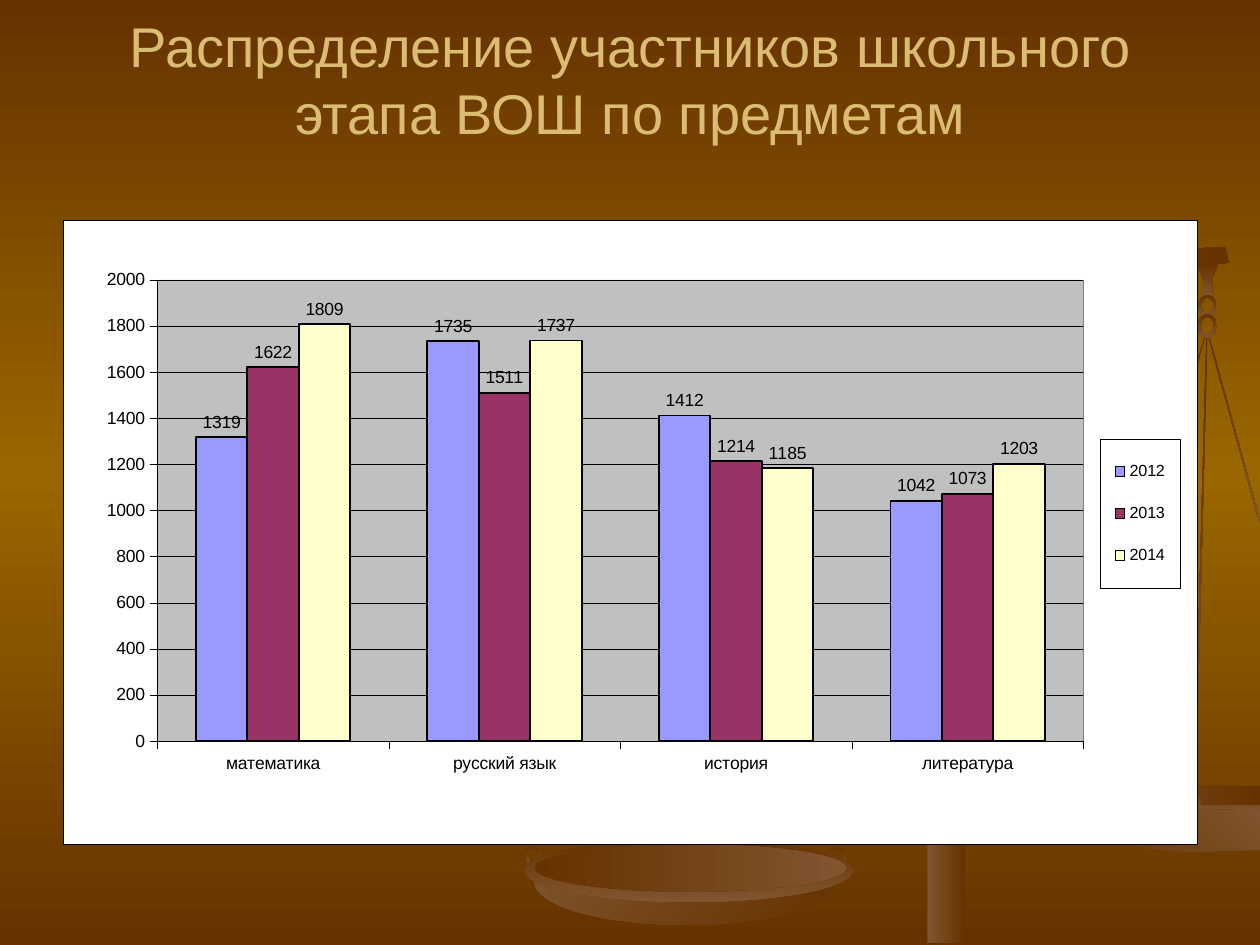
from dataclasses import dataclass

import pptx
import pptx.chart.data
import pptx.dml.color
import pptx.enum.chart
import pptx.enum.shapes
import pptx.enum.text
import pptx.oxml
import pptx.oxml.ns
import pptx.util
from copy import deepcopy

Pt = pptx.util.Pt
qn = pptx.oxml.ns.qn
SHAPE = pptx.enum.shapes.MSO_SHAPE


@dataclass(frozen=True)
class Theme:
    font: str = "Arial"
    dark: str = "663300"
    middle: str = "996600"
    light: str = "805530"
    title: str = "DBBD71"
    ink: str = "000000"
    paper: str = "FFFFFF"
    plot: str = "C0C0C0"
    plot_border: str = "808080"
    series: tuple = ("9999FF", "993366", "FFFFCC")
    title_size: float = 32
    chart_size: float = 10
    legend_size: float = 9.2
    hairline: float = 0.25


THEME = Theme()
RISING = (THEME.dark, THEME.light)
FALLING = (THEME.light, THEME.dark)
SUBJECTS = ("математика", "русский язык", "история", "литература")
PARTICIPANTS = {
    "2012": (1319, 1735, 1412, 1042),
    "2013": (1622, 1511, 1214, 1073),
    "2014": (1809, 1737, 1185, 1203),
}


def rgb(value):
    return pptx.dml.color.RGBColor.from_string(value)


def fill_gradient(fill, colors, angle):
    """Fill with two colours; the angle runs clockwise."""
    fill.gradient()
    fill.gradient_angle = (360 - angle) % 360
    for stop, color, position in zip(fill.gradient_stops, colors, (0, 1)):
        stop.color.rgb = rgb(color)
        stop.position = position


def finish_decoration(shape, colors, angle):
    shape.shadow.inherit = False
    shape.line.fill.background()
    fill_gradient(shape.fill, colors, angle)


def add_preset(slide, kind, box, colors=RISING, angle=90, rotation=0):
    shape = slide.shapes.add_shape(kind, *map(Pt, box))
    shape.rotation = rotation
    finish_decoration(shape, colors, angle)
    return shape


def add_outline(slide, left, top, points, colors=RISING, angle=90):
    """Draw a closed outline from points relative to left and top."""
    placed = [(Pt(left + x), Pt(top + y)) for x, y in points]
    builder = slide.shapes.build_freeform(*placed[0])
    builder.add_line_segments(placed[1:], close=True)
    finish_decoration(builder.convert_to_shape(), colors, angle)


def add_link(slide, left, top, width, height):
    link = add_preset(slide, SHAPE.DONUT, (left, top, width, height))
    link.adjustments[0] = 0.16


def set_background(slide):
    fill = slide.background.fill
    fill_gradient(fill, (THEME.dark, THEME.dark), 90)
    first = slide.element.find(".//" + qn("a:gs"))
    first.addnext(deepcopy(first))
    center = fill.gradient_stops[1]
    center.position = 0.5
    center.color.rgb = rgb(THEME.middle)


def add_beam(slide, left, top):
    add_outline(slide, left, top, [(323, 0), (325.5, 9), (0.7, 55.4), (0, 49),
                                   (153, 11.5), (169, 9.4)], FALLING, 0)


def add_chain(slide, left, top):
    """Hook, two links and the strings of the right pan."""
    for x, y, height, rotation in ((-33, 37, 259, 16.6), (2, 41, 250, 1.5),
                                   (21, 40, 110, 344.6)):
        add_preset(slide, SHAPE.RECTANGLE, (left + x, top + y, 0.8, height),
                   rotation=rotation)
    add_outline(slide, left, top, [(12.5, 0), (0, 0.7), (3.6, 9.4), (3.6, 19.5),
                                   (8.6, 19.5), (8.6, 8.6)])
    add_link(slide, left + 0.8, top + 18, 10.5, 12.5)
    add_link(slide, left + 0.4, top + 29, 11, 13.5)


def add_right_pan(slide, left, top, width):
    """The pan is cut off by the slide edge at its full width."""
    rim = [(94, 1), (50, 0.5), (22, 0), (3, 2), (0, 4), (4, 7), (18, 11),
           (49, 14), (78, 15.5), (width, 16), (width, 2)]
    bowl = [(3, 7), (11, 19), (27, 29), (47, 34), (63, 37), (82, 38), (94, 38),
            (width, 37), (width, 14.5), (91, 14), (42, 12), (12, 9)]
    plate = [(93, 0), (42, 0), (9, 3), (5, 4), (13, 6), (37, 9), (61, 11),
             (92, 11.5), (width, 11.5), (width, 1)]
    add_outline(slide, left, top, rim)
    add_outline(slide, left, top, bowl, angle=315)
    add_outline(slide, left, top, plate, FALLING, 0)
    add_link(slide, left + 82, top + 2, 9, 13.5)


def add_left_pan(slide, left, top):
    add_link(slide, left + 173, top + 4, 11, 14)
    add_link(slide, left + 1, top + 4, 8.5, 11.5)
    for box, colors, angle in (((6, 0, 173, 49), FALLING, 45),
                               ((0, 0, 188, 36), RISING, 90),
                               ((6, 3, 178, 27), RISING, 0)):
        x, y, width, height = box
        add_preset(slide, SHAPE.OVAL, (left + x, top + y, width, height),
                   colors, angle)


def add_scales(slide):
    add_beam(slide, 377, 141)
    add_chain(slide, 684, 150.5)
    add_right_pan(slide, 595.4, 448.6, 124.6)
    add_left_pan(slide, 299.5, 479.5)
    add_preset(slide, SHAPE.RECTANGLE, (530, 222, 21.5, 317), FALLING, 0)


def set_title(slide, box, text):
    title = slide.shapes.title
    title.left, title.top, title.width, title.height = map(Pt, box)
    title.text_frame.text = text
    title.text_frame.vertical_anchor = pptx.enum.text.MSO_ANCHOR.MIDDLE
    paragraph = title.text_frame.paragraphs[0]
    paragraph.alignment = pptx.enum.text.PP_ALIGN.CENTER
    set_font(paragraph.font, THEME.title_size, THEME.title)


def set_font(font, size, color=THEME.ink):
    font.name, font.size, font.bold = THEME.font, Pt(size), False
    font.color.rgb = rgb(color)


def set_line(line, width=THEME.hairline):
    line.color.rgb = rgb(THEME.ink)
    line.width = Pt(width)


def chart_xml(body):
    return pptx.oxml.parse_xml(body.replace(
        ">", f" {pptx.oxml.ns.nsdecls('c', 'a')}>", 1))


def area_format(fill, border):
    return chart_xml(
        f'<c:spPr><a:solidFill><a:srgbClr val="{fill}"/></a:solidFill>'
        f'<a:ln w="{Pt(THEME.hairline)}"><a:solidFill><a:srgbClr val="{border}"/>'
        '</a:solidFill></a:ln></c:spPr>')


def manual_layout(parent, box, target=""):
    """Return a layout in fractions of the chart, dropping any earlier one."""
    for old in parent.findall(qn("c:layout")):
        parent.remove(old)
    x, y, width, height = box
    return chart_xml(
        f'<c:layout><c:manualLayout>{target}<c:xMode val="edge"/><c:yMode val="edge"/>'
        f'<c:x val="{x}"/><c:y val="{y}"/><c:w val="{width}"/><c:h val="{height}"/>'
        '</c:manualLayout></c:layout>')


def format_areas(chart):
    space = chart.element
    space.find(qn("c:chart")).addnext(area_format(THEME.paper, THEME.ink))
    plot_area = space.find(".//" + qn("c:plotArea"))
    plot_area.insert(0, manual_layout(plot_area, (0.083, 0.095, 0.817, 0.74),
                                      '<c:layoutTarget val="inner"/>'))
    plot_area.append(area_format(THEME.plot, THEME.plot_border))
    legend = space.find(".//" + qn("c:legend"))
    layout = manual_layout(legend, (0.915, 0.35, 0.07, 0.24))
    legend.find(qn("c:legendPos")).addnext(layout)
    legend.find(qn("c:overlay")).addnext(area_format(THEME.paper, THEME.ink))


def add_participants_chart(slide, box):
    enums = pptx.enum.chart
    data = pptx.chart.data.CategoryChartData()
    data.categories = SUBJECTS
    for year, values in PARTICIPANTS.items():
        data.add_series(year, values)
    chart = slide.shapes.add_chart(
        enums.XL_CHART_TYPE.COLUMN_CLUSTERED, *map(Pt, box), data).chart
    chart.has_title = False
    set_font(chart.font, THEME.chart_size)
    plot = chart.plots[0]
    plot.gap_width, plot.overlap, plot.vary_by_categories = 150, 0, False
    for series, color in zip(plot.series, THEME.series):
        series.format.fill.solid()
        series.format.fill.fore_color.rgb = rgb(color)
        set_line(series.format.line, 1)
        labels = series.data_labels
        labels.show_value = True
        labels.position = enums.XL_LABEL_POSITION.OUTSIDE_END
        set_font(labels.font, THEME.chart_size)
    for axis in (chart.category_axis, chart.value_axis):
        axis.major_tick_mark = enums.XL_TICK_MARK.OUTSIDE
        set_line(axis.format.line)
        set_font(axis.tick_labels.font, THEME.chart_size)
    values = chart.value_axis
    values.minimum_scale, values.maximum_scale, values.major_unit = 0, 2000, 200
    values.has_major_gridlines = True
    set_line(values.major_gridlines.format.line)
    chart.has_legend = True
    chart.legend.position = enums.XL_LEGEND_POSITION.RIGHT
    chart.legend.include_in_layout = False
    set_font(chart.legend.font, THEME.legend_size)
    format_areas(chart)


def main():
    presentation = pptx.Presentation()
    presentation.slide_width, presentation.slide_height = Pt(720), Pt(540)
    slide = presentation.slides.add_slide(presentation.slide_layouts[5])
    set_background(slide)
    add_scales(slide)
    set_title(slide, (36.5, 0, 648, 90),
              "Распределение участников школьного этапа ВОШ по предметам")
    add_participants_chart(slide, (36, 126, 648, 356.5))
    presentation.save("out.pptx")


if __name__ == "__main__":
    main()
